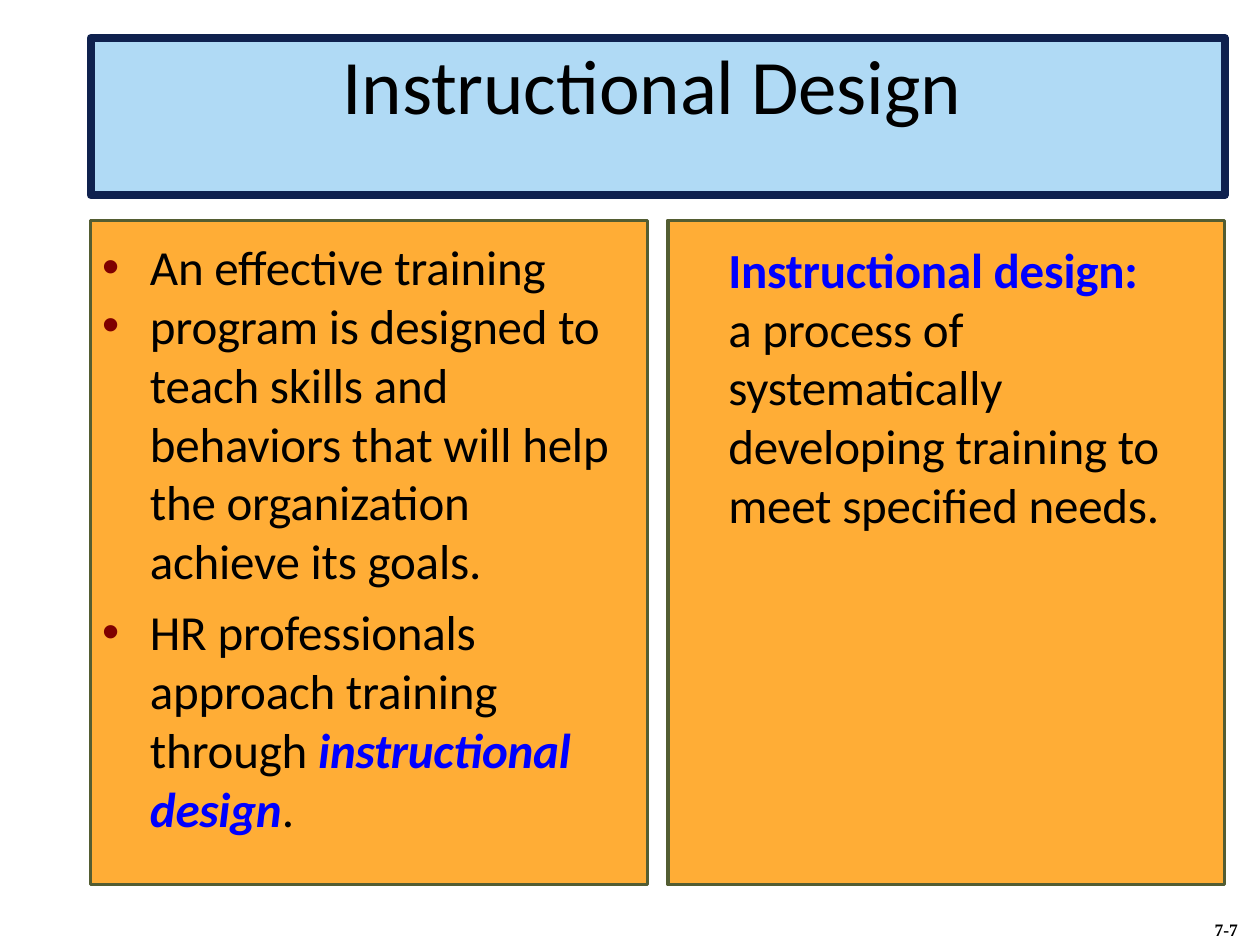
from dataclasses import dataclass

from lxml import etree
from pptx import Presentation
from pptx.dml.color import RGBColor
from pptx.enum.shapes import MSO_SHAPE
from pptx.enum.text import MSO_ANCHOR, MSO_AUTO_SIZE, PP_ALIGN
from pptx.oxml.ns import qn
from pptx.util import Inches, Pt

RECTANGLE = MSO_SHAPE.RECTANGLE
TOP = MSO_ANCHOR.TOP
LEFT = PP_ALIGN.LEFT
NO_FIT = MSO_AUTO_SIZE.NONE

# Content: a paragraph is a list of (text, style) runs
TITLE = "Instructional Design"
PAGE = "7-7"
PANELS = [
    dict(
        bulleted=True,
        margins=(0.09, 0.13, 0.24, 0),
        paragraphs=[
            [("An effective training", "plain")],
            [("program is designed to teach skills and behaviors that will "
              "help the organization achieve its goals.", "plain")],
            [("HR professionals approach training through ", "plain"),
             ("instructional design", "key"), (".", "plain")],
        ],
        space_before=[0, 0, 7],
    ),
    dict(
        bulleted=False,
        margins=(0.48, 0.15, 0.42, 0),
        paragraphs=[
            [("Instructional design: ", "term"),
             ("a process of systematically developing training to meet "
              "specified needs.", "plain")],
        ],
        space_before=[0],
    ),
]


@dataclass(frozen=True)
class Theme:
    text: str = "000000"
    accent: str = "0000FF"
    bullet: str = "7F0000"
    title_fill: str = "B0DAF5"
    title_line: str = "0F214E"
    panel_fill: str = "FFAD36"
    panel_line: str = "535D32"
    font: str = "Calibri"
    page_font: str = "Times New Roman"
    bullet_font: str = "Arial"
    title_size: float = 44
    body_size: float = 28
    page_size: float = 10
    body_leading: float = 33.6


THEME = Theme()
STYLES = {
    "plain": dict(color=THEME.text),
    "term": dict(color=THEME.accent, bold=True),
    "key": dict(color=THEME.accent, bold=True, italic=True),
}

# Grid, in inches
SLIDE_W, SLIDE_H = 10, 7.5
GRID_LEFT, GRID_WIDTH, GUTTER = 0.72, 9, 0.16
TITLE_TOP, TITLE_HEIGHT = 0.3, 1.25
PANEL_TOP, PANEL_HEIGHT = 1.75, 5.27
PANEL_WIDTH = (GRID_WIDTH - GUTTER) / len(PANELS)
BULLET_INDENT = 0.38


def add_text(paragraph, text, *, size, font=THEME.font, color=THEME.text,
             bold=False, italic=False, tracking=-0.1):
    run = paragraph.add_run()
    run.text = text
    run.font.name, run.font.size = font, Pt(size)
    run.font.bold, run.font.italic = bold, italic
    run.font.color.rgb = RGBColor.from_string(color)
    run.font._element.set("spc", str(round(tracking * 100)))


def add_bullet(paragraph):
    properties = paragraph._p.get_or_add_pPr()
    indent = Inches(BULLET_INDENT)
    properties.set("marL", str(indent))
    properties.set("indent", str(-indent))
    color = etree.SubElement(properties, qn("a:buClr"))
    etree.SubElement(color, qn("a:srgbClr"), val=THEME.bullet)
    etree.SubElement(properties, qn("a:buFont"), typeface=THEME.bullet_font)
    etree.SubElement(properties, qn("a:buChar"), char="•")


def paint(shape, fill, line, width):
    shape.fill.solid()
    shape.fill.fore_color.rgb = RGBColor.from_string(fill)
    shape.line.color.rgb = RGBColor.from_string(line)
    shape.line.width = Pt(width)


def prepare_frame(shape, margins=(0, 0, 0, 0), wrap=True):
    frame = shape.text_frame
    frame.word_wrap = wrap
    frame.auto_size = NO_FIT
    frame.vertical_anchor = TOP
    (frame.margin_left, frame.margin_top,
     frame.margin_right, frame.margin_bottom) = map(Inches, margins)
    frame.paragraphs[0].alignment = LEFT
    return frame


def add_panel(slide, column, panel):
    left = GRID_LEFT + column * (PANEL_WIDTH + GUTTER)
    box = slide.shapes.add_shape(RECTANGLE, *map(
        Inches, (left, PANEL_TOP, PANEL_WIDTH, PANEL_HEIGHT)))
    box.shadow.inherit = False
    paint(box, THEME.panel_fill, THEME.panel_line, 2)
    frame = prepare_frame(box, panel["margins"])
    for i, runs in enumerate(panel["paragraphs"]):
        paragraph = frame.add_paragraph() if i else frame.paragraphs[0]
        paragraph.alignment = LEFT
        paragraph.line_spacing = Pt(THEME.body_leading)
        if panel["space_before"][i]:
            paragraph.space_before = Pt(panel["space_before"][i])
        if panel["bulleted"]:
            add_bullet(paragraph)
        for text, style in runs:
            add_text(paragraph, text, size=THEME.body_size, **STYLES[style])


def main():
    deck = Presentation()
    deck.slide_width, deck.slide_height = Inches(SLIDE_W), Inches(SLIDE_H)
    slide = deck.slides.add_slide(deck.slide_layouts[5])

    # Title bar
    title = slide.shapes.title
    title.left, title.top, title.width, title.height = map(
        Inches, (GRID_LEFT, TITLE_TOP, GRID_WIDTH, TITLE_HEIGHT))
    paint(title, THEME.title_fill, THEME.title_line, 4.5)
    heading = prepare_frame(title, (2, 0, 0, 0)).paragraphs[0]
    add_text(heading, TITLE, size=THEME.title_size)

    # Two columns
    for column, panel in enumerate(PANELS):
        add_panel(slide, column, panel)

    # Page number
    page = slide.shapes.add_textbox(*map(Inches, (9.64, 7.29, 0.3, 0.17)))
    number = prepare_frame(page, wrap=False).paragraphs[0]
    add_text(number, PAGE, size=THEME.page_size, font=THEME.page_font,
             bold=True, tracking=0)

    deck.save("out.pptx")


if __name__ == "__main__":
    main()
